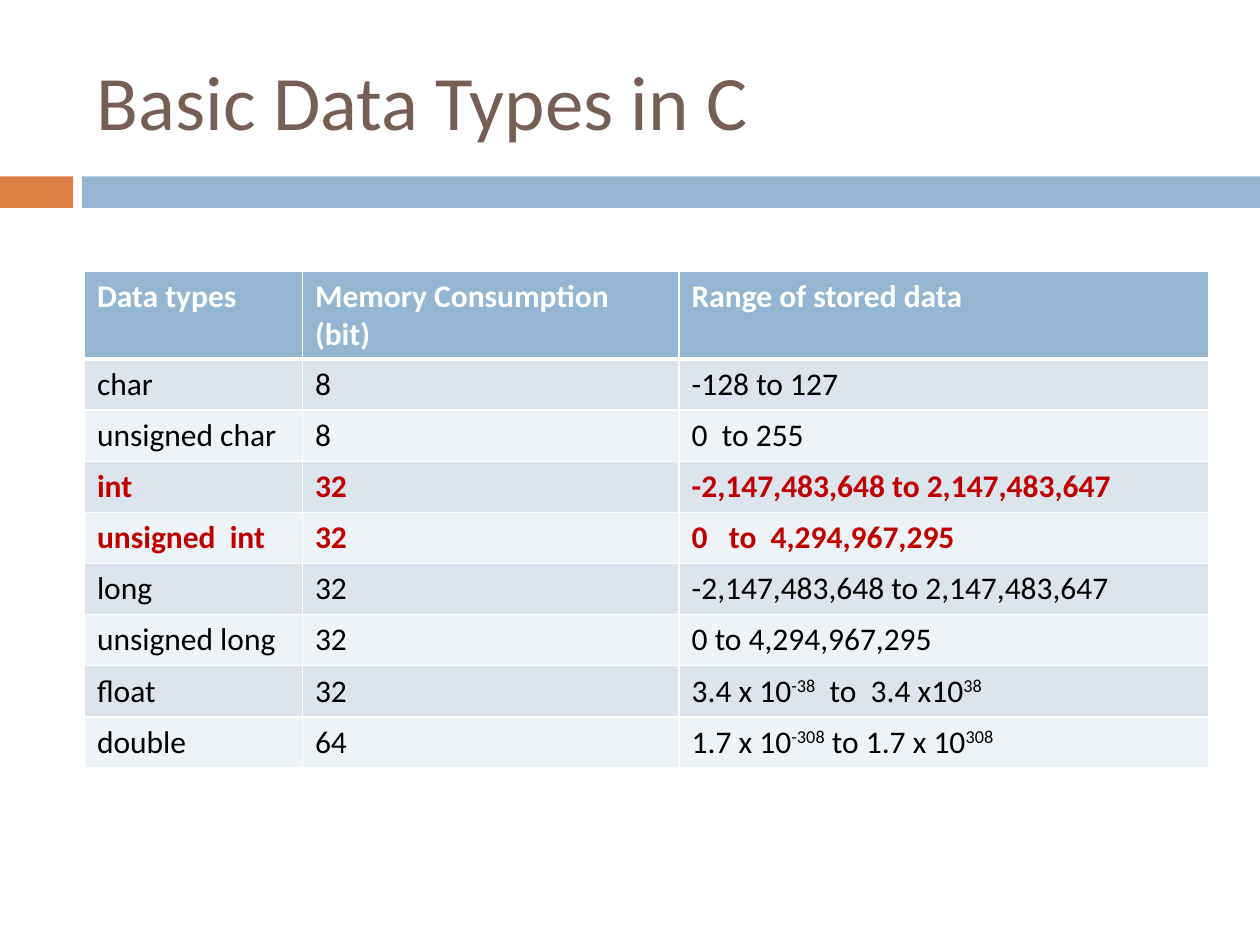
from lxml.etree import SubElement
from pptx import Presentation
from pptx.dml.color import RGBColor
from pptx.enum.shapes import MSO_SHAPE
from pptx.enum.text import MSO_ANCHOR
from pptx.oxml.ns import qn
from pptx.util import Inches, Pt

ORANGE = RGBColor(0xDD, 0x80, 0x47)
BLUE = RGBColor(0x94, 0xB6, 0xD2)
BROWN = RGBColor(0x77, 0x5F, 0x55)
WHITE = RGBColor(0xFF, 0xFF, 0xFF)
BLACK = RGBColor(0x00, 0x00, 0x00)
RED = RGBColor(0xC0, 0x00, 0x00)
BANDS = (RGBColor(0xEE, 0xF3, 0xF7), RGBColor(0xDC, 0xE5, 0xEE))

TITLE_FORMAT = {"name": "Calibri", "size": Pt(44), "color": BROWN}
BODY_FORMAT = {"name": "Calibri", "size": Pt(18), "bold": False, "color": BLACK}
HEADER_FORMAT = {**BODY_FORMAT, "bold": True, "color": WHITE}
KEY_FORMAT = {**BODY_FORMAT, "bold": True, "color": RED}

COLUMN_WIDTHS = (1.73, 2.99, 4.2)
KEY_TYPES = ("int", "unsigned  int")
DATA_TYPES = (
    ("Data types", "Memory Consumption (bit)", "Range of stored data"),
    ("char", "8", "-128 to 127"),
    ("unsigned char", "8", "0  to 255"),
    ("int", "32", "-2,147,483,648 to 2,147,483,647"),
    ("unsigned  int", "32", "0   to  4,294,967,295"),
    ("long", "32", "-2,147,483,648 to 2,147,483,647"),
    ("unsigned long", "32", "0 to 4,294,967,295"),
    ("float", "32", "3.4 x 10^-38^  to  3.4 x10^38"),
    ("double", "64", "1.7 x 10^-308^ to 1.7 x 10^308"),
)


def write_text(paragraph, text, formats):
    """Write text in runs, raising each part enclosed by carets."""
    for index, part in enumerate(text.split("^")):
        if not part:
            continue
        run = paragraph.add_run()
        run.text = part
        for attribute, value in formats.items():
            if attribute == "color":
                run.font.color.rgb = value
            else:
                setattr(run.font, attribute, value)
        if index % 2:
            run.font._element.set("baseline", "30000")


def add_title(slide, left, top, width, height):
    """Place the slide title, centred vertically in its box."""
    title = slide.shapes.add_textbox(left, top, width, height).text_frame
    title.word_wrap = True
    title.vertical_anchor = MSO_ANCHOR.MIDDLE
    write_text(title.paragraphs[0], "Basic Data Types in C", TITLE_FORMAT)


def add_divider(slide, left, top, width, height):
    """Place the short accent bar and the long bar beside it."""
    accent, offset = Inches(0.58), Inches(0.65)
    for start, length, color in ((0, accent, ORANGE), (offset, width - offset, BLUE)):
        bar = slide.shapes.add_shape(MSO_SHAPE.RECTANGLE, left + start, top, length, height)
        bar.shadow.inherit = False
        bar.fill.solid()
        bar.fill.fore_color.rgb = color
        bar.line.fill.background()


def add_borders(cell, top_width, bottom_width):
    """Draw white borders round a cell."""
    properties = cell._tc.get_or_add_tcPr()
    for side, width in (("L", 1), ("R", 1), ("T", top_width), ("B", bottom_width)):
        line = SubElement(properties, qn(f"a:ln{side}"), w=str(Pt(width)))
        fill = SubElement(line, qn("a:solidFill"))
        SubElement(fill, qn("a:srgbClr"), val=str(WHITE))


def add_type_table(slide, left, top, width, height):
    """Place the table of data types with a header and banded rows."""
    table = slide.shapes.add_table(
        len(DATA_TYPES), len(COLUMN_WIDTHS), left, top, width, height
    ).table
    for column, column_width in zip(table.columns, COLUMN_WIDTHS):
        column.width = Inches(column_width)
    for row, values in enumerate(DATA_TYPES):
        if row == 0:
            formats, color = HEADER_FORMAT, BLUE
        else:
            formats = KEY_FORMAT if values[0] in KEY_TYPES else BODY_FORMAT
            color = BANDS[row % 2]
        for column, value in enumerate(values):
            cell = table.cell(row, column)
            add_borders(cell, 3 if row == 1 else 1, 3 if row == 0 else 1)
            cell.fill.solid()
            cell.fill.fore_color.rgb = color
            write_text(cell.text_frame.paragraphs[0], value, formats)


def main():
    """Build the slide and save it."""
    deck = Presentation()
    deck.slide_width, deck.slide_height = Inches(10), Inches(7.5)
    slide = deck.slides.add_slide(deck.slide_layouts[6])
    left, width = Inches(0.67), Inches(8.92)
    add_divider(slide, 0, Inches(1.4), deck.slide_width, Inches(0.25))
    add_title(slide, left, Inches(0.25), width, Inches(1.08))
    add_type_table(slide, left, Inches(2.15), width, Inches(3.65))
    deck.save("out.pptx")


if __name__ == "__main__":
    main()
